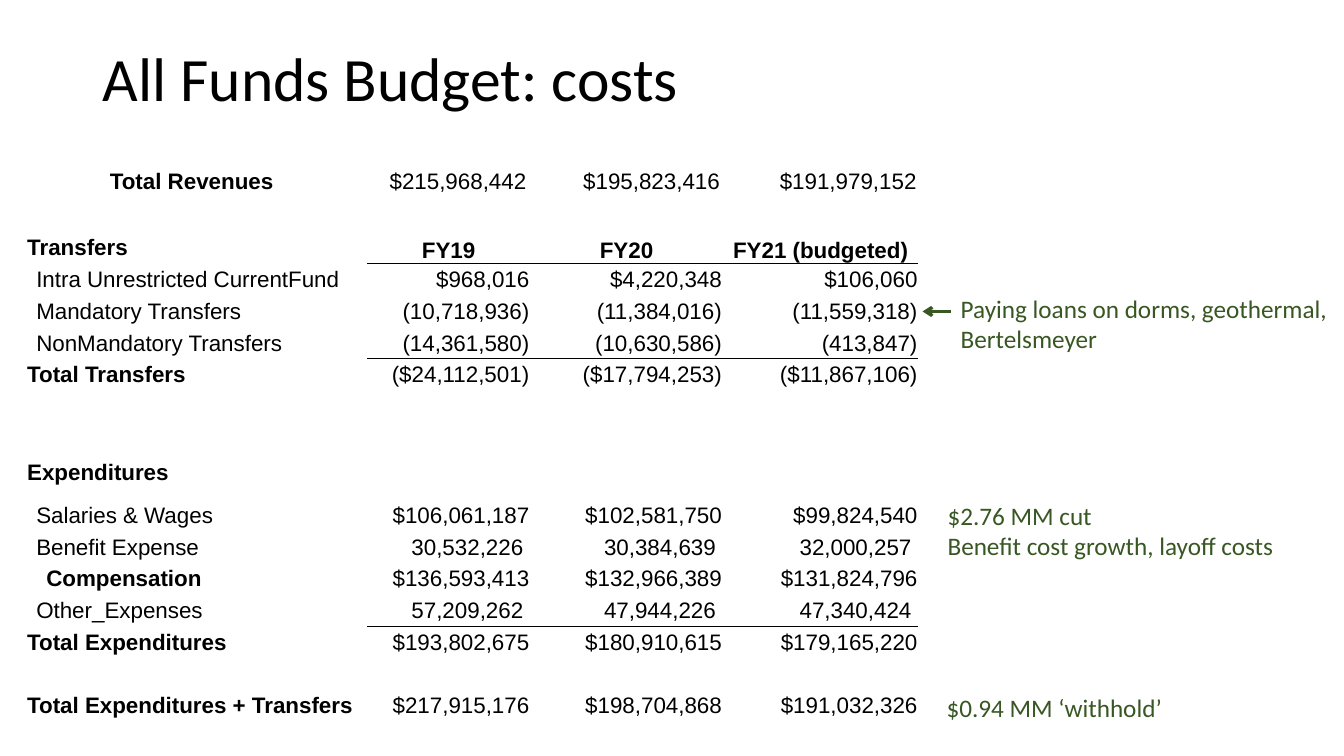
from lxml.etree import SubElement as Sub
from pptx import Presentation
from pptx.dml.color import RGBColor
from pptx.enum.shapes import MSO_CONNECTOR as Conn
from pptx.enum.text import MSO_ANCHOR as Anchor, PP_ALIGN as Align
from pptx.oxml import parse_xml
from pptx.oxml.ns import nsdecls, qn
from pptx.util import Inches, Pt

BLACK, WHITE, GREEN = "000000", "FFFFFF", "385723"
PLAIN = "{2D5ABB26-0587-4C30-8999-92F81FD0307C}"
BLANK = ("", "", "", "")

REVENUE = [("Total Revenues", "$215,968,442", "$195,823,416", "$191,979,152")]
COSTS = [
    ("Transfers", "FY19", "FY20", "FY21 (budgeted)"),
    ("Intra Unrestricted CurrentFund", "$968,016", "$4,220,348", "$106,060"),
    ("Mandatory Transfers", "(10,718,936)", "(11,384,016)", "(11,559,318)"),
    ("NonMandatory Transfers", "(14,361,580)", "(10,630,586)", "(413,847)"),
    ("Total Transfers", "($24,112,501)", "($17,794,253)", "($11,867,106)"),
    BLANK,
    ("Expenditures", "", "", ""),
    ("Salaries & Wages", "$106,061,187", "$102,581,750", "$99,824,540"),
    ("Benefit Expense", "30,532,226", "30,384,639", "32,000,257"),
    ("Compensation", "$136,593,413", "$132,966,389", "$131,824,796"),
    ("Other_Expenses", "57,209,262", "47,944,226", "47,340,424"),
    ("Total Expenditures", "$193,802,675", "$180,910,615", "$179,165,220"),
    BLANK,
    ("Total Expenditures + Transfers", "$217,915,176", "$198,704,868", "$191,032,326"),
]
INDENT = {1: 0.1, 2: 0.1, 3: 0.1, 7: 0.1, 8: 0.1, 9: 0.2, 10: 0.1}
RULED = (0, 3, 10)
TALL = {5: 0.54, 6: 0.54}


def color(code):
    return RGBColor.from_string(code)


def style(para, size, face, code, bold=False):
    for run in para.runs:
        font = run.font
        font.size, font.name, font.bold = Pt(size), face, bold
        font.color.rgb = color(code)


def rule(cell):
    cell._tc.get_or_add_tcPr().insert(0, parse_xml(
        f'<a:lnB {nsdecls("a")} w="12700"><a:solidFill>'
        f'<a:srgbClr val="{BLACK}"/></a:solidFill></a:lnB>'))


def fill_cell(cell, text, first, head, indent):
    cell.fill.solid()
    cell.fill.fore_color.rgb = color(WHITE)
    plain = text[:1].isdigit()
    cell.margin_left = Inches(indent if first and indent else 0.01)
    cell.margin_right = Inches(0.07 if plain else 0.01)
    cell.margin_top, cell.margin_bottom = Inches(0.01), 0
    cell.vertical_anchor = Anchor.BOTTOM if head and not first else Anchor.MIDDLE
    cell.text_frame.text = text
    para = cell.text_frame.paragraphs[0]
    if not first:
        para.alignment = Align.CENTER if head else Align.RIGHT
    style(para, 16, "Arial", BLACK, head or first and indent != 0.1)
    if not text:
        Sub(para._p, qn("a:endParaRPr")).set("sz", "1600")


def add_grid(slide, box, cols, rows, head=None, indent={}, ruled=(), tall={}):
    frame = slide.shapes.add_table(len(rows), len(cols), *map(Inches, box))
    table = frame.table
    table.first_row = table.horz_banding = False
    for tag in frame._element.iter(qn("a:tableStyleId")):
        tag.text = PLAIN
    for col, width in zip(table.columns, cols):
        col.width = Inches(width)
    short = (box[3] - sum(tall.values())) / (len(rows) - len(tall))
    for r, row in enumerate(rows):
        table.rows[r].height = Inches(tall.get(r, short))
        for c, text in enumerate(row):
            cell = table.cell(r, c)
            fill_cell(cell, text, c == 0, r == head, indent.get(r, 0))
            if c and r in ruled:
                rule(cell)


def add_text(slide, box, lines, size, code, wrap=True):
    frame = slide.shapes.add_textbox(*map(Inches, box)).text_frame
    frame.word_wrap = wrap
    frame.text = "\n".join(lines)
    for para in frame.paragraphs:
        style(para, size, "Calibri", code)
    return frame


def add_title(slide, box, text):
    frame = add_text(slide, box, [text], 44, BLACK)
    frame.vertical_anchor = Anchor.MIDDLE
    frame.paragraphs[0].line_spacing = 0.9


def add_arrow(slide, start, end, y):
    arrow = slide.shapes.add_connector(
        Conn.STRAIGHT, *map(Inches, (start, y, end, y)))
    arrow.line.color.rgb = color(GREEN)
    arrow.line.width = Pt(2.25)
    Sub(arrow.line._get_or_add_ln(), qn("a:tailEnd")).set("type", "arrow")
    Sub(arrow._element.spPr, qn("a:effectLst"))


def add_notes(slide, box):
    left, top, width, height = box
    add_text(slide, (left + 0.14, top, width - 0.14, 0.71),
             ["Paying loans on dorms, geothermal, Bertelsmeyer"], 18, GREEN)
    add_text(slide, (left + 0.01, top + 2.05, 3.47, 0.71),
             ["$2.76 MM cut", "Benefit cost growth, layoff costs"], 18, GREEN, False)
    add_text(slide, (left, top + height - 0.4, 2.36, 0.4),
             ["$0.94 MM ‘withhold’"], 18, GREEN, False)
    add_arrow(slide, left + 0.14, left - 0.14, top + 0.23)


def main():
    deck = Presentation()
    deck.slide_width, deck.slide_height = Inches(13.33), Inches(7.5)
    slide = deck.slides.add_slide(deck.slide_layouts[6])
    add_grid(slide, (0.26, 2.3, 8.84, 4.86), (3.38, 1.62, 1.91, 1.94),
             COSTS, 0, INDENT, RULED, TALL)
    add_title(slide, (0.92, 0.08, 11.5, 1.45), "All Funds Budget: costs")
    add_notes(slide, (9.29, 2.86, 4.26, 4.36))
    add_grid(slide, (1.08, 1.63, 8.03, 0.34), (2.64, 1.51, 1.92, 1.95), REVENUE)
    deck.save("out.pptx")


if __name__ == "__main__":
    main()
